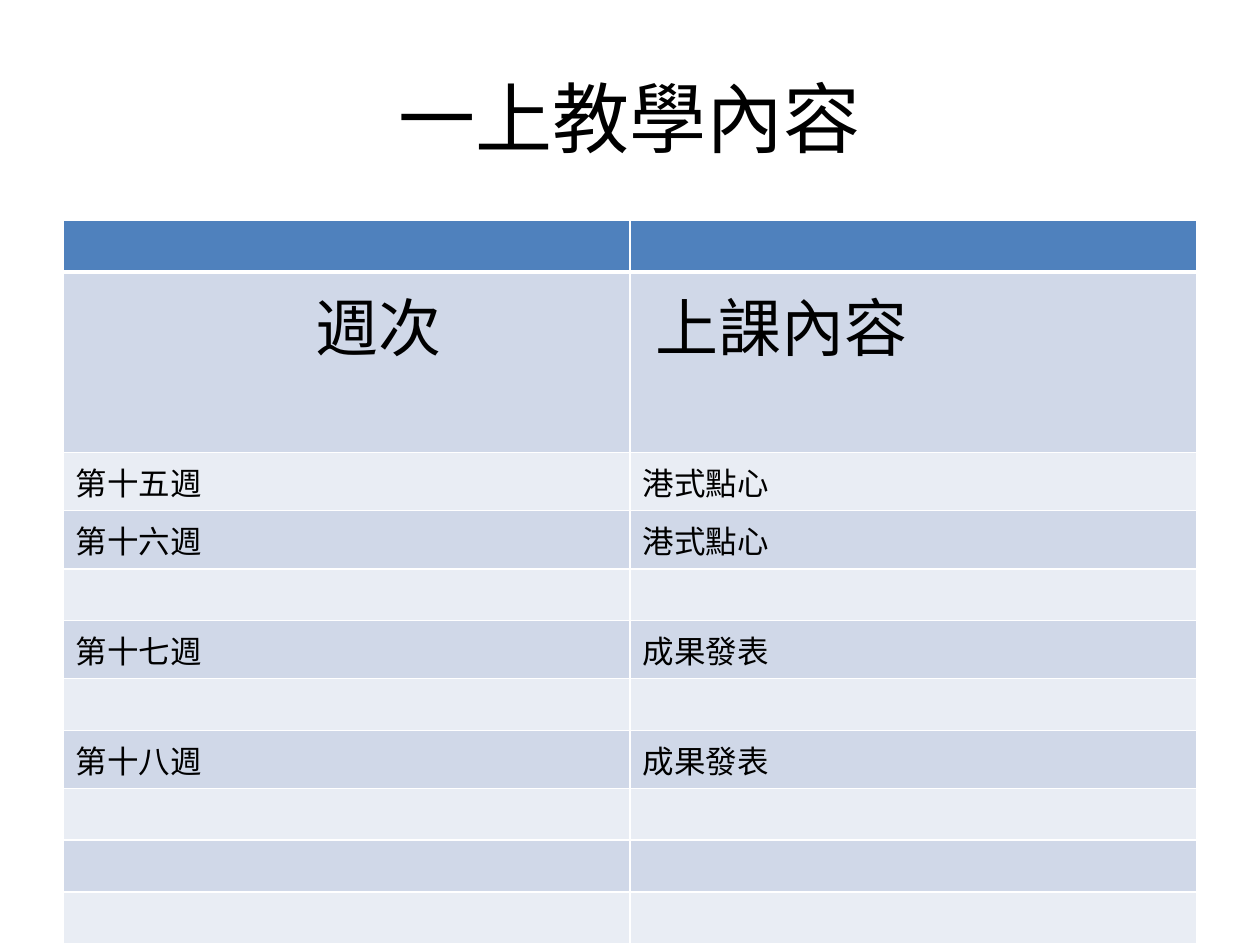
from dataclasses import dataclass

from lxml.etree import SubElement
from pptx import Presentation
from pptx.dml.color import RGBColor
from pptx.enum.text import MSO_ANCHOR, PP_ALIGN
from pptx.oxml.ns import qn
from pptx.table import _Cell
from pptx.text.text import _Paragraph
from pptx.util import Inches, Pt

BLACK, WHITE = "000000", "FFFFFF"
HEADER_FILL = "4F81BD"
BAND_FILLS = ("D0D8E8", "E9EDF4")
EMPTY_HEIGHT, WEEK_HEIGHT, HEADING_HEIGHT = 0.41, 0.46, 1.43


@dataclass
class Row:
    texts: tuple[str, str] = ("", "")
    height: float = EMPTY_HEIGHT
    size: int = 18
    margins: tuple[float, float] = (0.1, 0.1)


def week(name: str, lesson: str) -> Row:
    return Row((name, lesson), WEEK_HEIGHT)


ROWS = [
    Row(),
    Row(("週次", "上課內容"), HEADING_HEIGHT, 36, (2.0, 0.2)),
    week("第十五週", "港式點心"),
    week("第十六週", "港式點心"),
    Row(),
    week("第十七週", "成果發表"),
    Row(),
    week("第十八週", "成果發表"),
    Row(),
    Row(),
    Row(),
]


def color(value: str) -> RGBColor:
    return RGBColor.from_string(value)


def add_span(para: _Paragraph, text: str, font: str, size: int) -> None:
    span = para.add_run()
    span.text = text
    span.font.name = font
    span.font.size = Pt(size)
    span.font.color.rgb = color(BLACK)


def set_borders(cell: _Cell, top: int, bottom: int) -> None:
    """Draw white cell edges; widths are in points. Call before filling the cell."""
    properties = cell._tc.get_or_add_tcPr()
    for side, width in (("L", 1), ("R", 1), ("T", top), ("B", bottom)):
        line = SubElement(properties, qn(f"a:ln{side}"), w=str(Pt(width)))
        fill = SubElement(line, qn("a:solidFill"))
        SubElement(fill, qn("a:srgbClr"), val=WHITE)


def fill_cell(cell: _Cell, row: Row, row_index: int, column: int) -> None:
    set_borders(cell, 3 if row_index == 1 else 1, 3 if row_index == 0 else 1)
    cell.fill.solid()
    band = BAND_FILLS[(row_index - 1) % 2]
    cell.fill.fore_color.rgb = color(band if row_index else HEADER_FILL)
    cell.margin_left = Inches(row.margins[column])
    para = cell.text_frame.paragraphs[0]
    if row.texts[column]:
        add_span(para, row.texts[column], "Arial", row.size)
    else:
        para.font.size = Pt(row.size)


def main() -> None:
    deck = Presentation()
    deck.slide_width, deck.slide_height = Inches(10), Inches(7.5)
    page = deck.slides.add_slide(deck.slide_layouts[5])

    title = page.shapes.title
    title.left, title.top = Inches(0.5), Inches(0.3)
    title.width, title.height = Inches(9), Inches(1.25)
    title.text_frame.vertical_anchor = MSO_ANCHOR.MIDDLE
    para = title.text_frame.paragraphs[0]
    para.alignment = PP_ALIGN.CENTER
    add_span(para, "一上教學內容", "Calibri", 44)

    total_height = sum(row.height for row in ROWS)
    table = page.shapes.add_table(
        len(ROWS), 2, Inches(0.5), Inches(1.75), Inches(9), Inches(total_height)
    ).table
    for row_index, row in enumerate(ROWS):
        table.rows[row_index].height = Inches(row.height)
        for column in range(2):
            fill_cell(table.cell(row_index, column), row, row_index, column)

    deck.save("out.pptx")


if __name__ == "__main__":
    main()
